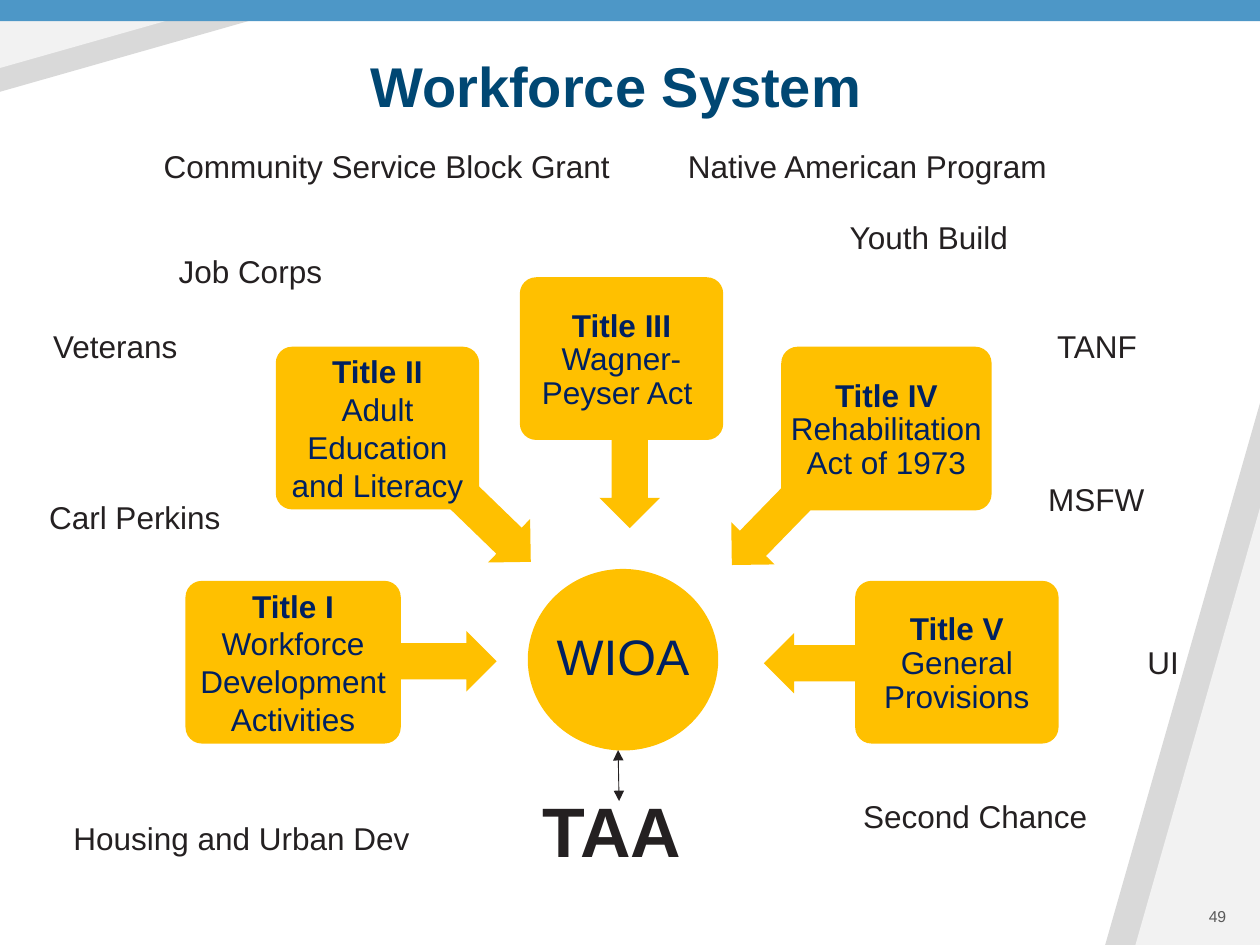
from dataclasses import dataclass

import pptx
import pptx.dml.color
import pptx.enum.shapes
import pptx.enum.text
import pptx.oxml
import pptx.oxml.ns
import pptx.util

Cm, Pt = pptx.util.Cm, pptx.util.Pt
Kind = pptx.enum.shapes.MSO_SHAPE
Align = pptx.enum.text.PP_ALIGN
Anchor = pptx.enum.text.MSO_ANCHOR

FONT = "Arial"
GOLD, NAVY, INK = "FFC000", "002060", "242021"
DARK, PALE, BLUE = "D9D9D9", "F2F2F2", "4D97C7"


@dataclass
class Box:
    """Place and size in centimetres."""
    x: float
    y: float
    w: float
    h: float


@dataclass
class Act:
    head: str
    body: str
    box: Box
    arrow: Box
    turn: float
    lines: float = 0.9


@dataclass
class Label:
    text: str
    box: Box
    size: float = 18
    bold: bool = False
    color: str = INK
    align: Align = Align.LEFT
    anchor: Anchor = Anchor.TOP


WEDGES = [
    (Box(22.28, 8.13, 3.12, 10.92), 0, DARK),
    (Box(22.89, 10.24, 2.51, 8.81), 0, PALE),
    (Box(0, 0, 6.5, 1.85), 180, DARK),
    (Box(0, 0, 4.83, 1.37), 180, PALE),
]

ACTS = [
    Act("Title I", "Workforce Development Activities",
        Box(3.74, 11.71, 4.34, 3.28), Box(8, 12.72, 2.01, 1.22), 180, 1.0),
    Act("Title II", "Adult Education and Literacy",
        Box(5.56, 6.99, 4.1, 3.28), Box(9.06, 10.05, 1.91, 1.22), 224.1, 1.0),
    Act("Title III", "Wagner-Peyser Act ",
        Box(10.48, 5.59, 4.1, 3.28), Box(11.74, 9.08, 1.91, 1.22), 270),
    Act("Title IV", "Rehabilitation Act of 1973",
        Box(15.75, 6.99, 4.24, 3.3), Box(14.45, 10.06, 2.01, 1.22), 314.2),
    Act("Title V", "General Provisions",
        Box(17.24, 11.71, 4.1, 3.28), Box(15.4, 12.76, 1.91, 1.22), 0),
]

LABELS = [
    Label("49", Box(23.07, 17.77, 1.9, 1.02), 9, False, "595959", Align.RIGHT, Anchor.BOTTOM),
    Label("UI", Box(22.88, 12.83, 2.4, 1.02)),
    Label("Native American Program", Box(13.62, 2.84, 7.95, 1.02)),
    Label("Veterans", Box(0.82, 6.46, 4.01, 1.02)),
    Label("MSFW", Box(20.88, 9.55, 4.01, 1.02)),
    Label("Housing and Urban Dev", Box(1.23, 16.38, 7.52, 1.02)),
    Label("Second Chance", Box(17.15, 15.95, 5.26, 1.02)),
    Label("Carl Perkins", Box(0.74, 9.91, 4.01, 1.02)),
    Label("Youth Build", Box(16.88, 4.27, 4.01, 1.02)),
    Label("Job Corps", Box(3.35, 4.95, 4.01, 1.02)),
    Label("TANF", Box(21.06, 6.46, 4.01, 1.02)),
    Label("Community Service Block Grant", Box(3.05, 2.83, 10.19, 1.02)),
    Label("TAA", Box(10.69, 15.75, 7.82, 1.96), 40, True),
]


def tint(code: str) -> pptx.dml.color.RGBColor:
    return pptx.dml.color.RGBColor.from_string(code)


def span(box: Box) -> tuple:
    return Cm(box.x), Cm(box.y), Cm(box.w), Cm(box.h)


def draw(slide, kind: Kind, box: Box, color: str, turn: float = 0, adjust: tuple = ()):
    shape = slide.shapes.add_shape(kind, *span(box))
    shape.shadow.inherit = False
    shape.fill.solid()
    shape.fill.fore_color.rgb = tint(color)
    shape.line.fill.background()
    shape.rotation = turn
    for i, value in enumerate(adjust):
        shape.adjustments[i] = value
    return shape


def write(para, text: str, size: float, color: str, bold: bool = False,
          align: Align = Align.CENTER, lines: float = 1.0) -> None:
    para.alignment = align
    para.line_spacing = lines
    run = para.add_run()
    run.text = text
    run.font.name = FONT
    run.font.size = Pt(size)
    run.font.bold = bold
    run.font.color.rgb = tint(color)


def pad(frame, inset: float) -> None:
    frame.word_wrap = True
    frame.vertical_anchor = Anchor.MIDDLE
    frame.margin_left = frame.margin_right = Cm(inset)
    frame.margin_top = frame.margin_bottom = Cm(inset)


def add_act(slide, act: Act) -> None:
    draw(slide, Kind.LEFT_ARROW, act.arrow, GOLD, act.turn, (0.6, 0.5))
    card = draw(slide, Kind.ROUNDED_RECTANGLE, act.box, GOLD, 0, (0.1,))
    frame = card.text_frame
    pad(frame, 0.04)
    write(frame.paragraphs[0], act.head, 18, NAVY, True)
    write(frame.add_paragraph(), act.body, 18, NAVY, lines=act.lines)


def add_label(slide, label: Label) -> None:
    frame = slide.shapes.add_textbox(*span(label.box)).text_frame
    frame.word_wrap = True
    frame.vertical_anchor = label.anchor
    write(frame.paragraphs[0], label.text, label.size, label.color, label.bold, label.align)


def add_title(slide, text: str) -> None:
    title = slide.shapes.title
    title.left, title.top, title.width, title.height = span(Box(7.21, 0.91, 17.5, 1.63))
    frame = title.text_frame
    frame.auto_size = pptx.enum.text.MSO_AUTO_SIZE.NONE
    frame.vertical_anchor = Anchor.TOP
    write(frame.paragraphs[0], text, 32, "004773", True, Align.LEFT)


def add_link(slide, x1: float, y1: float, x2: float, y2: float) -> None:
    """Draw a thin line with an arrowhead at each end."""
    link = slide.shapes.add_connector(
        pptx.enum.shapes.MSO_CONNECTOR.STRAIGHT, Cm(x1), Cm(y1), Cm(x2), Cm(y2))
    link.line.width = Pt(0.5)
    link.line.color.rgb = tint(INK)
    space = pptx.oxml.ns.nsdecls("a")
    for end in ("headEnd", "tailEnd"):
        tip = pptx.oxml.parse_xml(f'<a:{end} {space} type="triangle"/>')
        link.line._get_or_add_ln().append(tip)
    link._element.spPr.append(pptx.oxml.parse_xml(f"<a:effectLst {space}/>"))


def main() -> None:
    deck = pptx.Presentation()
    deck.slide_width, deck.slide_height = Cm(25.4), Cm(19.05)
    slide = deck.slides.add_slide(deck.slide_layouts[5])
    for box, turn, color in WEDGES:
        draw(slide, Kind.ISOSCELES_TRIANGLE, box, color, turn, (1,))
    draw(slide, Kind.RECTANGLE, Box(0, 0, 25.4, 0.43), BLUE)
    hub = draw(slide, Kind.OVAL, Box(10.64, 11.47, 3.84, 3.66), GOLD)
    pad(hub.text_frame, 0)
    write(hub.text_frame.paragraphs[0], "WIOA", 28.5, NAVY, lines=0.9)
    for act in ACTS:
        add_act(slide, act)
    for label in LABELS:
        add_label(slide, label)
    add_title(slide, "Workforce System")
    add_link(slide, 12.46, 15.12, 12.48, 16.15)
    deck.save("out.pptx")


if __name__ == "__main__":
    main()
